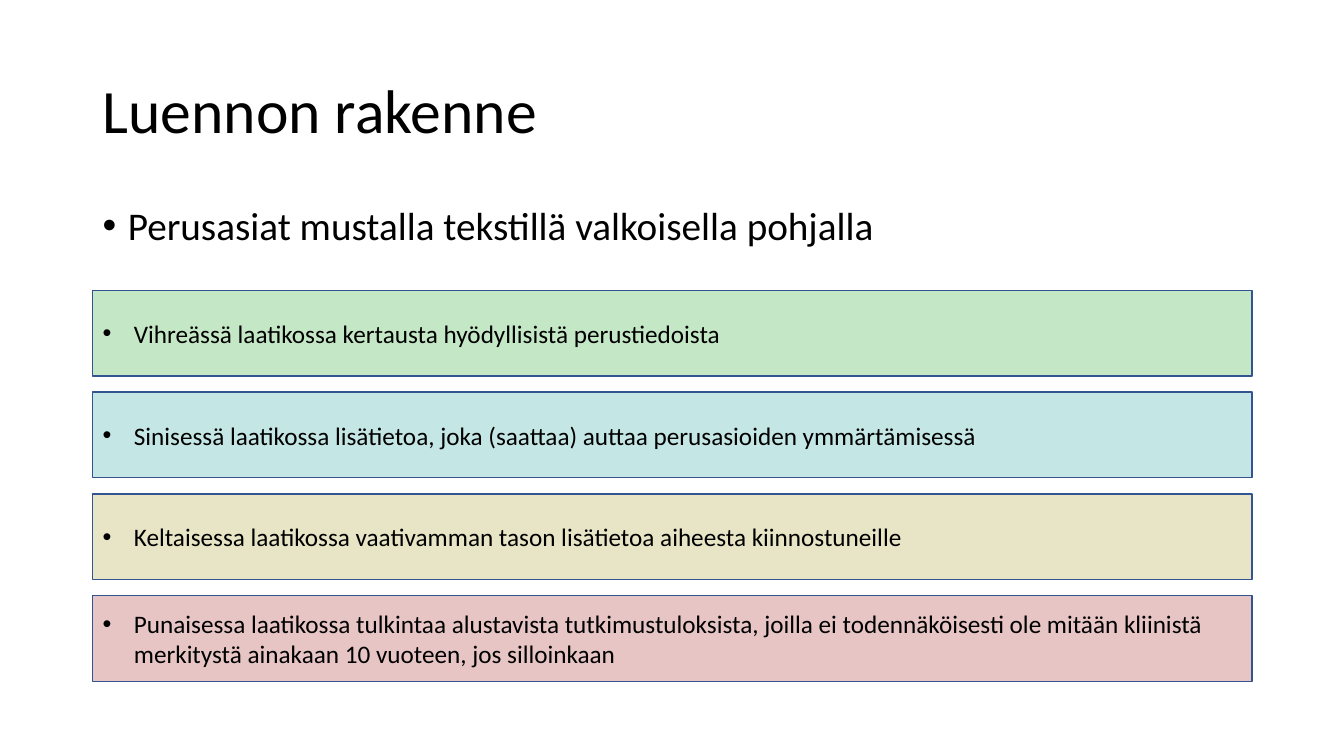
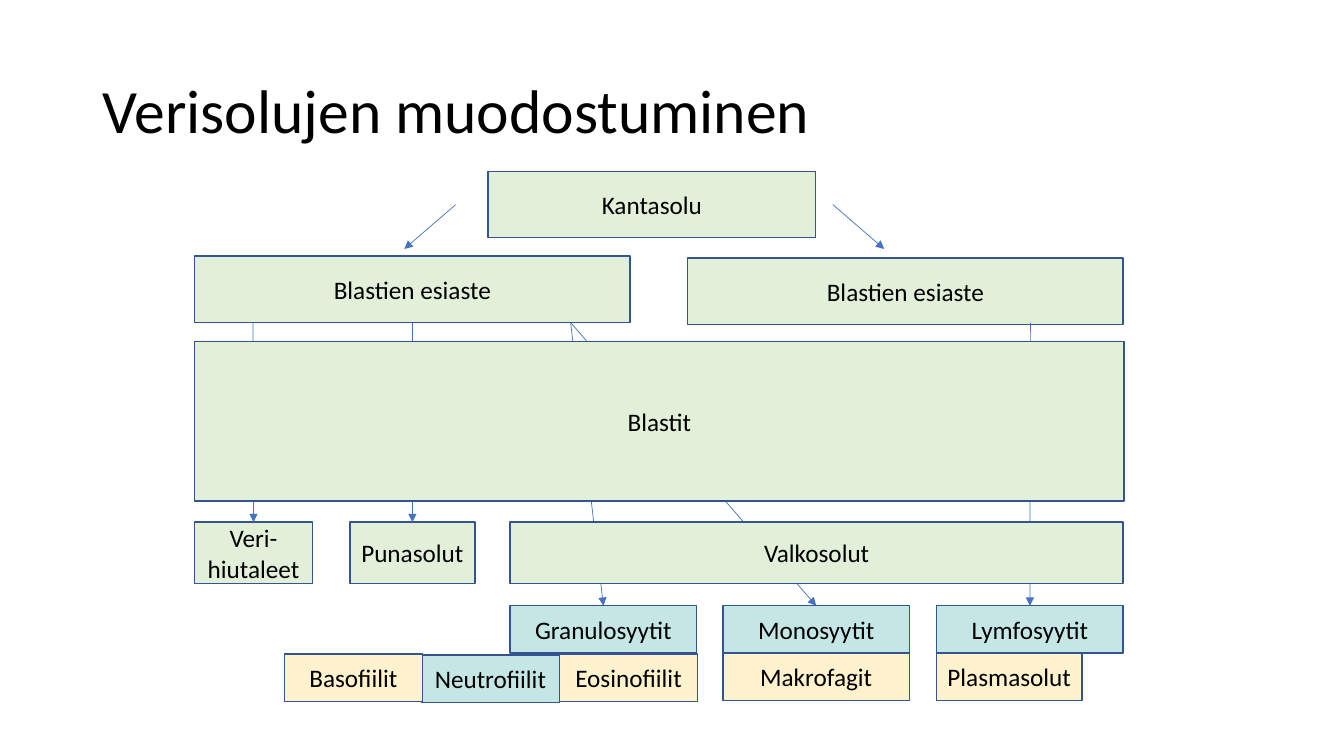
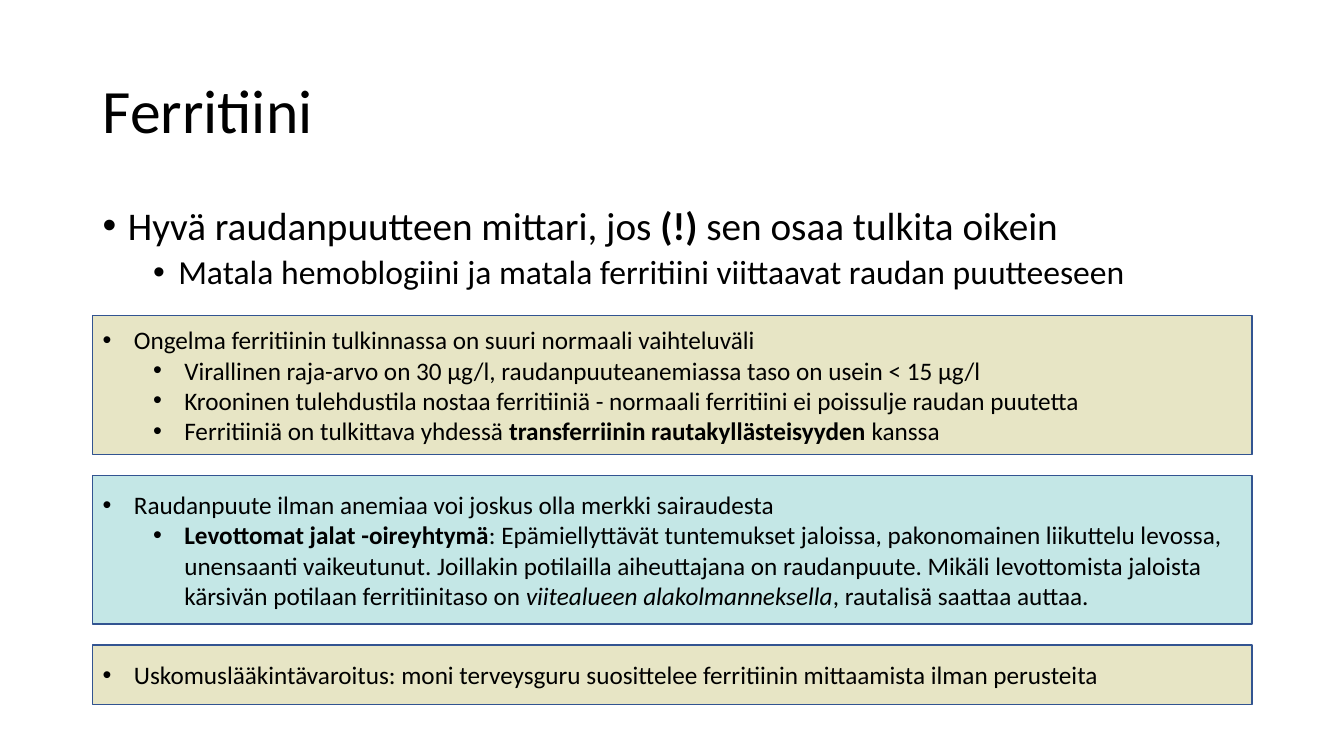
from lxml.etree import SubElement
from pptx import Presentation
from pptx.dml.color import RGBColor
from pptx.enum.shapes import MSO_CONNECTOR, MSO_SHAPE
from pptx.enum.text import MSO_ANCHOR, PP_ALIGN
from pptx.oxml.ns import qn
from pptx.util import Pt

EMU_PER_PX = 9144  # 100 px to the inch
FONT = "Calibri"
COLOURS = {
    "text": "000000",
    "outline": "325491",
    "arrow": "4472C4",
    "green": "C4E8C6",
    "blue": "C4E7E6",
    "yellow": "E7E5C5",
    "red": "E7C5C5",
    "cell": "E2F0D9",
    "subtype": "FFF2CC",
}

# Regions shared by the slides: left, top, width, height
TITLE_BOX = (92, 40, 1150, 145)
BODY_BOX = (92, 200, 1150, 110)
DIAGRAM_ORIGIN = (193, 170)

# Per level: size, left indent, hanging indent, space before, line spacing
BODY_LEVELS = [(28, 25, 25, 10, 0.9), (24, 75, 25, 5, 0.9)]
BAND_LEVELS = [(18, 31, 31, 0, 1.0), (18, 81, 31, 0, 1.0)]


def px(length):
    return int(length * EMU_PER_PX)


def colour(name):
    return RGBColor.from_string(COLOURS[name])


# Text
def add_run(paragraph, text, size, style=""):
    run = paragraph.add_run()
    run.text = text
    run.font.name = FONT
    run.font.size = Pt(size)
    run.font.bold = style == "bold"
    run.font.italic = style == "italic"
    run.font.color.rgb = colour("text")


def write_bullets(frame, items, levels):
    """Each item is a level followed by (text, style) runs."""
    for index, (level, *runs) in enumerate(items):
        paragraph = frame.add_paragraph() if index else frame.paragraphs[0]
        size, indent, hanging, before, spacing = levels[level]
        paragraph.level = level
        paragraph.alignment = PP_ALIGN.LEFT
        paragraph.space_before = Pt(before)
        paragraph.line_spacing = spacing
        properties = paragraph._p.get_or_add_pPr()
        properties.set("marL", str(px(indent)))
        properties.set("indent", str(-px(hanging)))
        SubElement(properties, qn("a:buFont")).set("typeface", "Arial")
        SubElement(properties, qn("a:buChar")).set("char", "•")
        for run in runs:
            add_run(paragraph, run[0], size, *run[1:])


def add_text_region(slide, box, anchor):
    frame = slide.shapes.add_textbox(*map(px, box)).text_frame
    frame.word_wrap = True
    frame.vertical_anchor = anchor
    return frame


def add_titled_slide(deck, title):
    slide = deck.slides.add_slide(deck.slide_layouts[6])
    paragraph = add_text_region(slide, TITLE_BOX, MSO_ANCHOR.MIDDLE).paragraphs[0]
    paragraph.line_spacing = 0.9
    add_run(paragraph, title, 44)
    return slide


def add_body(slide, items):
    write_bullets(add_text_region(slide, BODY_BOX, MSO_ANCHOR.TOP), items, BODY_LEVELS)


# Boxes and arrows
def add_panel(slide, box, fill):
    panel = slide.shapes.add_shape(MSO_SHAPE.RECTANGLE, *map(px, box))
    panel.shadow.inherit = False
    panel.fill.solid()
    panel.fill.fore_color.rgb = colour(fill)
    panel.line.color.rgb = colour("outline")
    panel.line.width = Pt(1)
    panel.text_frame.word_wrap = True
    panel.text_frame.vertical_anchor = MSO_ANCHOR.MIDDLE
    return panel


def add_bands(slide, top, gap, bands):
    """Stacks full-width bands given as (height, fill, items)."""
    left, _, width, _ = BODY_BOX
    for height, fill, items in bands:
        panel = add_panel(slide, (left, top, width, height), fill)
        write_bullets(panel.text_frame, items, BAND_LEVELS)
        top += height + gap


def add_arrow(slide, start, end):
    arrow = slide.shapes.add_connector(MSO_CONNECTOR.STRAIGHT, *map(px, start + end))
    arrow.line.color.rgb = colour("arrow")
    arrow.line.width = Pt(0.5)
    SubElement(arrow.line._get_or_add_ln(), qn("a:tailEnd")).set("type", "triangle")
    SubElement(arrow._element.spPr, qn("a:effectLst"))
    return arrow


def add_cell_tree(slide, origin):
    left, top = origin

    def at(x, y):
        return left + x, top + y

    def cell(label, x, y, width, height, fill="cell"):
        panel = add_panel(slide, at(x, y) + (width, height), fill)
        paragraph = panel.text_frame.paragraphs[0]
        paragraph.alignment = PP_ALIGN.CENTER
        add_run(paragraph, label, 18)
        return panel

    # Stem cell, precursors and first mature cells
    cell("Kantasolu", 291, 0, 325, 66)
    myeloid = cell("Blastien esiaste", 0, 84, 432, 66)
    cell("Blastien esiaste", 489, 86, 432, 66)
    platelets = cell("Veri- hiutaleet", 0, 348, 117, 61)
    red_cells = cell("Punasolut", 154, 348, 124, 61)

    # White cell types, evenly spaced
    granulocytes, monocytes, lymphocytes = [
        cell(label, 313 + 423 * column // 2, 431, 185, 47, "blue")
        for column, label in enumerate(["Granulosyytit", "Monosyytit", "Lymfosyytit"])
    ]

    # Arrows run behind the wide blast and white cell boxes
    for start_x, end_x in [(259, 208), (633, 684)]:
        add_arrow(slide, at(start_x, 33), at(end_x, 77))
    for start_x, target in [(58, platelets), (216, red_cells), (373, granulocytes),
                            (373, monocytes), (829, lymphocytes)]:
        arrow = add_arrow(slide, at(start_x, 150), at(start_x, 348))
        arrow.end_connect(target, 0)
        if target is red_cells:
            arrow.begin_connect(myeloid, 2)

    cell("Blastit", 0, 169, 922, 158)
    cell("Valkosolut", 313, 348, 608, 61)

    # Subtypes
    for label, x, y, width, fill in [
        ("Neutrofiilit", 225, 480, 137, "blue"),
        ("Eosinofiilit", 362, 479, 137, "subtype"),
        ("Basofiilit", 89, 479, 137, "subtype"),
        ("Makrofagit", 524, 478, 185, "subtype"),
        ("Plasmasolut", 736, 478, 144, "subtype"),
    ]:
        cell(label, x, y, width, 47, fill)


# Slides
def build_structure(deck):
    slide = add_titled_slide(deck, "Luennon rakenne")
    add_body(slide, [(0, ("Perusasiat mustalla tekstillä valkoisella pohjalla",))])
    meanings = [
        ("green", "Vihreässä laatikossa kertausta hyödyllisistä perustiedoista"),
        ("blue", "Sinisessä laatikossa lisätietoa, joka (saattaa) auttaa perusasioiden "
                 "ymmärtämisessä"),
        ("yellow", "Keltaisessa laatikossa vaativamman tason lisätietoa aiheesta "
                   "kiinnostuneille"),
        ("red", "Punaisessa laatikossa tulkintaa alustavista tutkimustuloksista, joilla ei "
                "todennäköisesti ole mitään kliinistä merkitystä ainakaan 10 vuoteen, jos "
                "silloinkaan"),
    ]
    add_bands(slide, 288, 16, [(85, fill, [(0, (text,))]) for fill, text in meanings])


def build_cell_formation(deck):
    slide = add_titled_slide(deck, "Verisolujen muodostuminen")
    add_cell_tree(slide, DIAGRAM_ORIGIN)


def build_ferritin(deck):
    slide = add_titled_slide(deck, "Ferritiini")
    add_body(slide, [
        (0, ("Hyvä raudanpuutteen mittari, jos ",), ("(!)", "bold"),
         (" sen osaa tulkita oikein",)),
        (1, ("Matala hemoblogiini ja matala ferritiini viittaavat raudan puutteeseen",)),
    ])
    interpretation = [
        (0, ("Ongelma ferritiinin tulkinnassa on suuri normaali vaihteluväli",)),
        (1, ("Virallinen raja-arvo on 30 µg/l, raudanpuuteanemiassa taso on usein "
             "< 15 µg/l",)),
        (1, ("Krooninen tulehdustila nostaa ferritiiniä - normaali ferritiini ei poissulje "
             "raudan puutetta",)),
        (1, ("Ferritiiniä on tulkittava yhdessä ",),
         ("transferriinin rautakyllästeisyyden ", "bold"), ("kanssa",)),
    ]
    restless_legs = [
        (0, ("Raudanpuute ilman anemiaa voi joskus olla merkki sairaudesta",)),
        (1, ("Levottomat jalat -oireyhtymä", "bold"),
         (": Epämiellyttävät tuntemukset jaloissa, pakonomainen liikuttelu levossa, "
          "unensaanti vaikeutunut. Joillakin potilailla aiheuttajana on raudanpuute. "
          "Mikäli levottomista jaloista kärsivän potilaan ferritiinitaso on ",),
         ("viitealueen alakolmanneksella", "italic"), (", rautalisä saattaa auttaa.",)),
    ]
    warning = [
        (0, ("Uskomuslääkintävaroitus: moni terveysguru suosittelee ferritiinin mittaamista "
             "ilman perusteita",)),
    ]
    add_bands(slide, 313, 21, [
        (138, "yellow", interpretation),
        (147, "blue", restless_legs),
        (59, "yellow", warning),
    ])


def main():
    deck = Presentation()
    deck.slide_width, deck.slide_height = px(1333), px(750)
    build_structure(deck)
    build_cell_formation(deck)
    build_ferritin(deck)
    deck.save("out.pptx")


if __name__ == "__main__":
    main()
